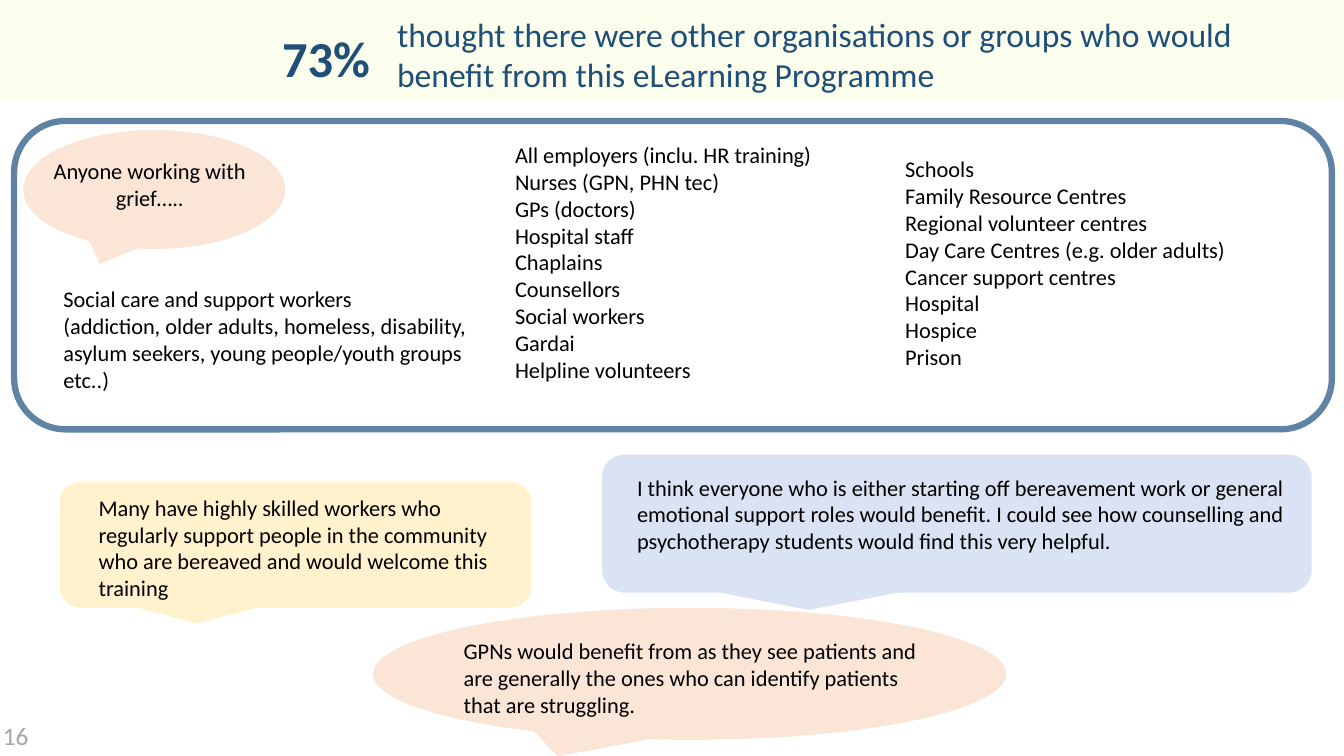
from lxml import etree
from pptx import Presentation
from pptx import util as u
from pptx.dml.color import RGBColor
from pptx.enum import shapes, text
from pptx.oxml.ns import qn

COLOURS = {
    "banner": "F9FECE", "frame": "5E83A5", "peach": "FBE5D6",
    "yellow": "FFF2CC", "blue": "DAE3F3", "heading": "1F4E79",
    "body": "000000", "number": "A6A6A6",
}
FONT = "Calibri"
KIND = shapes.MSO_SHAPE


def colour(name):
    return RGBColor.from_string(COLOURS[name])


def add_panel(page, kind, place, fill=None, line=None, opacity=None):
    panel = page.shapes.add_shape(kind, *map(u.Inches, place))
    panel.shadow.inherit = False
    if fill:
        panel.fill.solid()
        panel.fill.fore_color.rgb = colour(fill)
    else:
        panel.fill.background()
    if line:
        panel.line.color.rgb = colour(line)
        panel.line.width = u.Pt(4.5)
    else:
        panel.line.fill.background()
    if opacity:
        tint = panel.fill._xPr.find(qn("a:solidFill"))[0]
        etree.SubElement(tint, qn("a:alpha"), val=str(opacity * 1000))


def add_text(page, place, lines, size=16, ink="body", bold=False,
             align=text.PP_ALIGN.LEFT, anchor=text.MSO_ANCHOR.TOP, spacing=None):
    box = page.shapes.add_textbox(*map(u.Inches, place))
    frame = box.text_frame
    frame.word_wrap = True
    frame.vertical_anchor = anchor
    for index, line in enumerate(lines):
        para = frame.paragraphs[0] if index == 0 else frame.add_paragraph()
        para.alignment = align
        para.line_spacing = spacing
        span = para.add_run()
        span.text = line
        span.font.name = FONT
        span.font.size = u.Pt(size)
        span.font.bold = bold
        span.font.color.rgb = colour(ink)


def main():
    deck = Presentation()
    deck.slide_width, deck.slide_height = u.Inches(13.33), u.Inches(7.5)
    page = deck.slides.add_slide(deck.slide_layouts[6])

    # Panels and speech bubbles
    add_panel(page, KIND.OVAL_CALLOUT, (3.7, 6.03, 6.28, 1.31), "peach")
    add_panel(page, KIND.ROUNDED_RECTANGLE, (0.14, 1.2, 13.07, 3.06), line="frame")
    add_panel(page, KIND.RECTANGLE, (0, 0, 13.31, 0.99), "banner", opacity=36)
    add_panel(page, KIND.OVAL_CALLOUT, (0.23, 1.29, 2.6, 1.18), "peach")
    add_panel(page, KIND.ROUNDED_RECTANGULAR_CALLOUT, (0.59, 4.78, 4.68, 1.25), "yellow")
    add_panel(page, KIND.ROUNDED_RECTANGULAR_CALLOUT, (5.97, 4.51, 7.04, 1.37), "blue")

    # Heading
    add_text(page, (2.7, 0.21, 1.3, 0.8), ["73%"], size=36, ink="heading",
             bold=True, anchor=text.MSO_ANCHOR.MIDDLE, spacing=0.9)
    add_text(page, (3.84, 0.09, 8.56, 0.91),
             ["thought there were other organisations or groups who would "
              "benefit from this eLearning Programme"], size=24, ink="heading")

    # Groups who would benefit
    add_text(page, (0.18, 1.51, 2.61, 0.64), ["Anyone working with grief….."],
             align=text.PP_ALIGN.CENTER)
    add_text(page, (0.53, 2.78, 4.51, 1.18), [
        "Social care and support workers",
        "(addiction, older adults, homeless, disability, asylum seekers, "
        "young people/youth groups etc..)"])
    add_text(page, (5.01, 1.35, 4.85, 2.79), [
        "All employers (inclu. HR training)", "Nurses (GPN, PHN tec)",
        "GPs (doctors)", "Hospital staff", "Chaplains", "Counsellors",
        "Social workers", "Gardai", "Helpline volunteers"])
    add_text(page, (8.88, 1.49, 3.5, 2.52), [
        "Schools", "Family Resource Centres", "Regional volunteer centres",
        "Day Care Centres (e.g. older adults)", "Cancer support centres",
        "Hospital", "Hospice", "Prison"])

    # Quotes
    add_text(page, (0.88, 4.85, 4.14, 1.18), [
        "Many have highly skilled workers who regularly support people in the "
        "community who are bereaved and would welcome this training"])
    add_text(page, (6.22, 4.65, 6.78, 0.91), [
        "I think everyone who is either starting off bereavement work or general "
        "emotional support roles would benefit. I could see how counselling and "
        "psychotherapy students would find this very helpful."])
    add_text(page, (4.5, 6.27, 4.85, 0.91), [
        "GPNs would benefit from as they see patients and are generally the ones "
        "who can identify patients that are struggling."])

    # Page number
    add_text(page, (-0.07, 7.1, 0.71, 0.4), ["16"], size=18, ink="number")

    deck.save("out.pptx")


if __name__ == "__main__":
    main()
